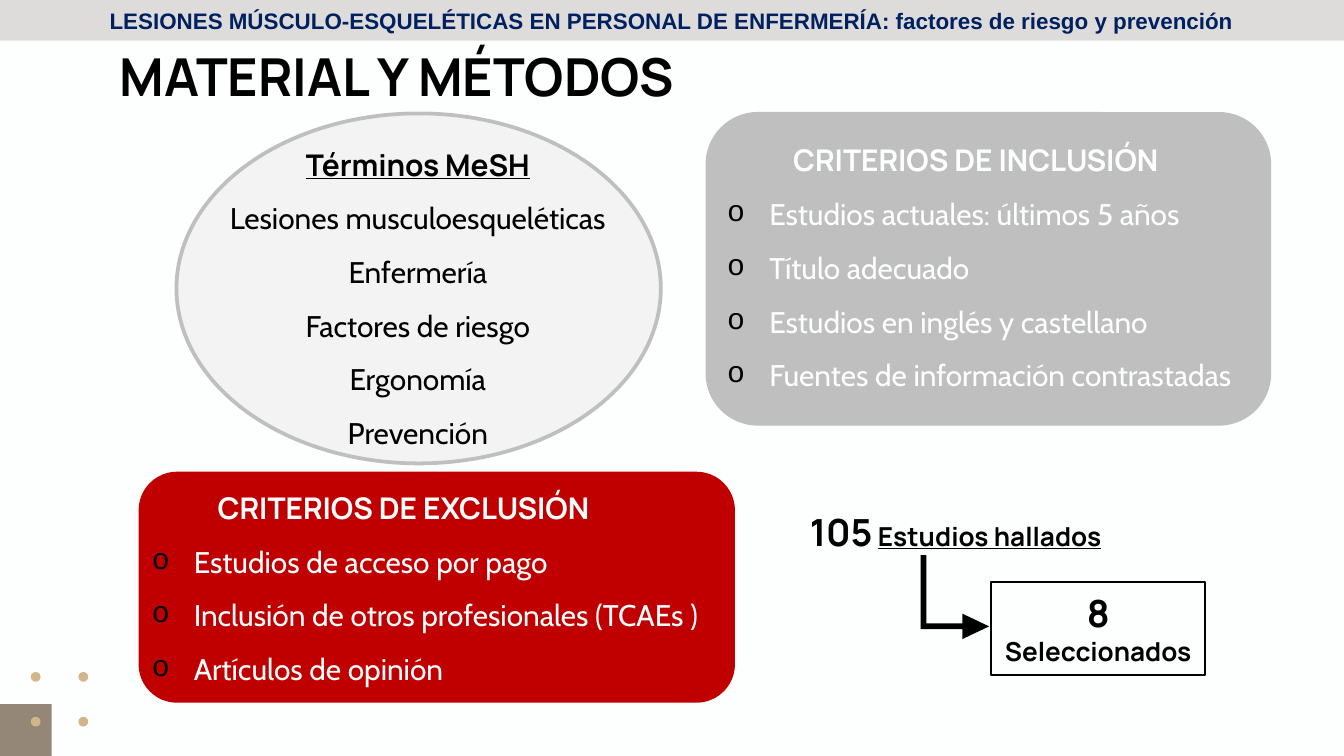
from itertools import product

from lxml.etree import SubElement
from pptx import Presentation
from pptx.dml.color import RGBColor
from pptx.enum.shapes import MSO_SHAPE
from pptx.enum.text import MSO_ANCHOR, PP_ALIGN
from pptx.oxml.ns import qn
from pptx.util import Pt

PX = 9525
COLORS = {
    "background": "FDFFFE", "black": "000000", "navy": "002060",
    "band": "DDDCDA", "brown": "948777", "sand": "D2B689",
    "gray": "BFBFBF", "red": "C00000", "pale": "F4F3F3",
}


def rgb(color):
    """Return the named colour."""
    return RGBColor.from_string(COLORS[color])


def add_figure(slide, kind, box, fill=None, line=None, width=1):
    """Add a preset shape with an optional fill and outline."""
    figure = slide.shapes.add_shape(kind, *(n * PX for n in box))
    figure.shadow.inherit = False
    if fill:
        figure.fill.solid()
        figure.fill.fore_color.rgb = rgb(fill)
    else:
        figure.fill.background()
    if line:
        figure.line.color.rgb = rgb(line)
        figure.line.width = Pt(width)
    else:
        figure.line.fill.background()
    return figure


def add_frame(slide, box):
    """Add a wrapping text box and return its text frame."""
    frame = slide.shapes.add_textbox(*(n * PX for n in box)).text_frame
    frame.word_wrap = True
    return frame


def set_font(font, size, name="Manrope", color="black", bold=True):
    """Set the face, size, colour and weight of a font."""
    font.name, font.size, font.bold = name, Pt(size), bold
    font.color.rgb = rgb(color)


def add_bullet(paragraph):
    """Give a paragraph a hanging round bullet."""
    properties = paragraph._p.get_or_add_pPr()
    properties.set("marL", str(30 * PX))
    properties.set("indent", str(-30 * PX))
    bullet_color = SubElement(properties, qn("a:buClr"))
    SubElement(bullet_color, qn("a:srgbClr"), val=COLORS["black"])
    SubElement(properties, qn("a:buFont"), typeface="Courier New")
    SubElement(properties, qn("a:buChar"), char="o")


def corner_ornament(slide, box):
    """Draw the brown square and its four dots."""
    x, y, w, h = box
    add_figure(slide, MSO_SHAPE.RECTANGLE, (x, y + h - 37, 37, 37), "brown")
    for left, top in product((22, 56), (0, 32)):
        add_figure(slide, MSO_SHAPE.OVAL, (x + left, y + top, 7, 7), "sand")


def page_title(slide, box):
    """Write the slide title."""
    frame = add_frame(slide, box)
    frame.vertical_anchor = MSO_ANCHOR.MIDDLE
    title = frame.paragraphs[0]
    title.text = "MATERIAL Y MÉTODOS"
    set_font(title.font, 28)


def criteria_panel(slide, box, text_box, fill, heading, criteria, spacing):
    """Draw a rounded card with a heading and bulleted criteria."""
    x, y, w, h = box
    left, top, width, height = text_box
    add_figure(slide, MSO_SHAPE.ROUNDED_RECTANGLE, box, fill)
    frame = add_frame(slide, (x + left, y + top, width, height))
    header = frame.paragraphs[0]
    header.text = heading
    header.line_spacing = spacing
    header._p.get_or_add_pPr().set("marL", str(47 * PX))
    set_font(header.font, 16, color="background")
    for criterion in criteria:
        item = frame.add_paragraph()
        item.text = criterion
        item.line_spacing = 1.5
        add_bullet(item)
        set_font(item.font, 16, "Cabin", "background", False)


def mesh_terms(slide, box):
    """Draw the ellipse with the search terms."""
    x, y, w, h = box
    add_figure(slide, MSO_SHAPE.OVAL, box, "pale", "gray", 2)
    frame = add_frame(slide, (x + 11, y + 6, w - 23, h + 20))
    heading = frame.paragraphs[0]
    heading.text = "Términos MeSH"
    set_font(heading.font, 16)
    heading.font.underline = True
    for words in ("Lesiones musculoesqueléticas Enfermería", "Factores de riesgo",
                  "Ergonomía", "Prevención"):
        term = frame.add_paragraph()
        term.text = words
        set_font(term.font, 16, "Cabin", bold=False)
    for paragraph in frame.paragraphs:
        paragraph.alignment = PP_ALIGN.CENTER
        paragraph.line_spacing = 1.5


def study_selection(slide, box):
    """Show the studies found and those selected."""
    x, y, w, h = box
    found = add_frame(slide, (x, y, w, 42)).paragraphs[0]
    for words, size, underline in (("105", 20, False), (" ", 14, False),
                                   ("Estudios hallados", 14, True)):
        run = found.add_run()
        run.text = words
        set_font(run.font, size)
        run.font.underline = underline

    arrow = add_figure(slide, MSO_SHAPE.BENT_UP_ARROW, (x + 83, y + 43, 60, 49), "black")
    arrow.rotation = 90
    for index, value in enumerate((0.084, 0.185, 0.39)):
        arrow.adjustments[index] = value

    selected = add_figure(slide, MSO_SHAPE.RECTANGLE, (x + 139, y + h - 66, 153, 66),
                          line="black")
    count = selected.text_frame.paragraphs[0]
    selected.text_frame.word_wrap = True
    count.alignment = PP_ALIGN.CENTER
    for words, size in (("8", 20), (" Seleccionados", 14)):
        run = count.add_run()
        run.text = words
        set_font(run.font, size)


def header_band(slide, box):
    """Draw the band with the name of the work."""
    band = add_figure(slide, MSO_SHAPE.RECTANGLE, box, "band")
    work = band.text_frame.paragraphs[0]
    work.text = ("LESIONES MÚSCULO-ESQUELÉTICAS EN PERSONAL DE ENFERMERÍA: "
                 "factores de riesgo y prevención")
    work.alignment = PP_ALIGN.CENTER
    set_font(work.font, 12, "Arial", "navy")


def main():
    """Build and save the slide."""
    deck = Presentation()
    deck.slide_width, deck.slide_height = 960 * PX, 540 * PX
    slide = deck.slides.add_slide(deck.slide_layouts[6])
    slide.background.fill.solid()
    slide.background.fill.fore_color.rgb = rgb("background")

    corner_ornament(slide, (0, 480, 63, 60))
    page_title(slide, (76, 24, 809, 60))
    criteria_panel(slide, (504, 80, 404, 224), (6, 4, 413, 227), "gray",
                   "CRITERIOS DE INCLUSIÓN",
                   ("Estudios actuales: últimos 5 años", "Título adecuado",
                    "Estudios en inglés y castellano",
                    "Fuentes de información contrastadas"), 1.5)
    criteria_panel(slide, (99, 337, 426, 165), (0, 8, 480, 208), "red",
                   "CRITERIOS DE EXCLUSIÓN",
                   ("Estudios de acceso por pago",
                    "Inclusión de otros profesionales (TCAEs )",
                    "Artículos de opinión"), 1.0)
    mesh_terms(slide, (126, 81, 346, 250))
    study_selection(slide, (569, 359, 340, 123))
    header_band(slide, (0, 0, 960, 29))
    deck.save("out.pptx")


if __name__ == "__main__":
    main()
